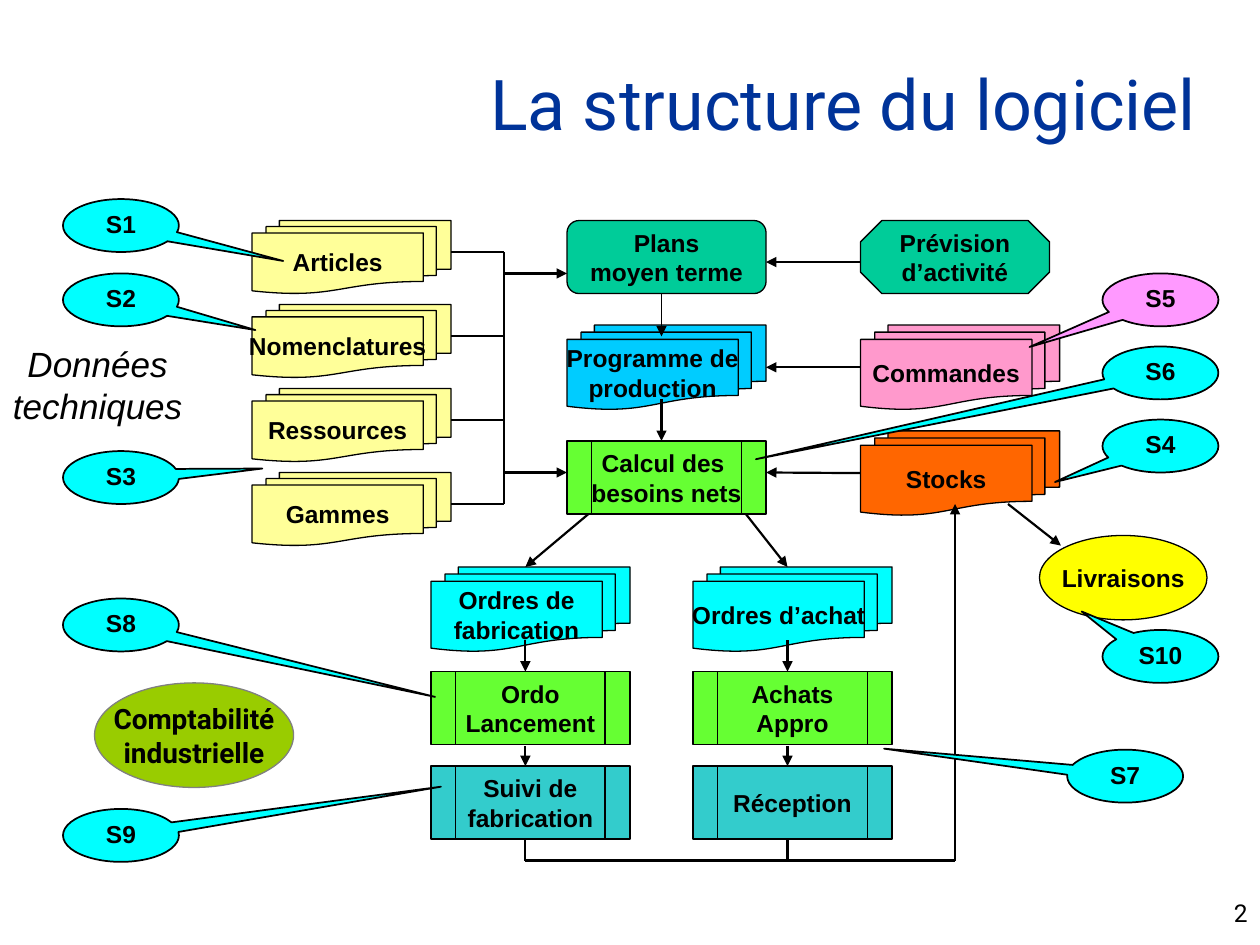
"""Build the slide that maps the modules of a production management program."""
from dataclasses import dataclass

from lxml import etree
from pptx import Presentation
from pptx import util as u
from pptx.dml.color import RGBColor
from pptx.enum import shapes, text
from pptx.oxml.ns import qn

KIND = shapes.MSO_SHAPE
DOCS = KIND.FLOWCHART_MULTIDOCUMENT
PROCESS = KIND.FLOWCHART_PREDEFINED_PROCESS
LEFT, RIGHT = 1, 3


@dataclass(frozen=True)
class Theme:
    black: str = "000000"
    gray: str = "808080"
    navy: str = "003399"
    cream: str = "FFFF99"
    teal: str = "00CC99"
    sky: str = "00CCFF"
    cyan: str = "00FFFF"
    green: str = "66FF33"
    sea: str = "33CCCC"
    pink: str = "FF99CC"
    orchid: str = "FF99FF"
    orange: str = "FF6600"
    yellow: str = "FFFF00"
    olive: str = "99CC00"
    body: str = "Arial"
    display: str = "Roboto"
    label_size: int = 14
    account_size: int = 16
    note_size: int = 20
    title_size: int = 40
    thin: float = 0.75
    callout: float = 1
    flow: float = 1.25
    bus: float = 1.5


THEME = Theme()


@dataclass(frozen=True)
class Node:
    label: str
    left: float
    top: float
    kind: KIND
    fill: str
    width: float = 1.58
    height: float = 0.58
    line: str = THEME.black
    font: str = THEME.body
    size: int = THEME.label_size


@dataclass(frozen=True)
class Link:
    start: tuple[float, float]
    end: tuple[float, float]
    weight: float = THEME.flow
    arrow: bool = True
    source: str = ""
    target: str = ""


@dataclass(frozen=True)
class Callout:
    label: str
    left: float
    top: float
    tail: tuple[float, float]
    fill: str = THEME.cyan


DATA_FILES = ("Articles", "Nomenclatures", "Ressources", "Gammes")
FILE_PITCH = 2 / 3
FILE_LEFT, MAKE_LEFT, PLAN_LEFT, BUY_LEFT, INPUT_LEFT = 2, 3.42, 4.5, 5.5, 6.83
BUS_X, MAKE_X, PLAN_X, BUY_X, RETURN_X = 4, 4.17, 5.25, 6.25, 7.58
RETURN_Y = 6.83

NODES = [
    *(Node(name, FILE_LEFT, 1.75 + row * FILE_PITCH, DOCS, THEME.cream)
      for row, name in enumerate(DATA_FILES)),
    Node("Plans\nmoyen terme", PLAN_LEFT, 1.75, KIND.FLOWCHART_ALTERNATE_PROCESS, THEME.teal),
    Node("Prévision\nd’activité", INPUT_LEFT, 1.75, KIND.OCTAGON, THEME.teal, width=1.5),
    Node("Programme de\nproduction", PLAN_LEFT, 2.58, DOCS, THEME.sky, height=0.67),
    Node("Commandes", INPUT_LEFT, 2.58, DOCS, THEME.pink, height=0.67),
    Node("Calcul des \nbesoins nets", PLAN_LEFT, 3.5, PROCESS, THEME.green),
    Node("Stocks", INPUT_LEFT, 3.42, DOCS, THEME.orange, height=0.67),
    Node("Ordres de\nfabrication", MAKE_LEFT, 4.5, DOCS, THEME.cyan, height=0.67),
    Node("Ordres d’achat", BUY_LEFT, 4.5, DOCS, THEME.cyan, height=0.67),
    Node("Ordo\nLancement", MAKE_LEFT, 5.33, PROCESS, THEME.green),
    Node("Achats\nAppro", BUY_LEFT, 5.33, PROCESS, THEME.green),
    Node("Suivi de\nfabrication", MAKE_LEFT, 6.08, PROCESS, THEME.sea),
    Node("Réception", BUY_LEFT, 6.08, PROCESS, THEME.sea),
    Node("Livraisons", 8.25, 4.25, KIND.OVAL, THEME.yellow, 1.33, 0.67),
    Node("Comptabilité\nindustrielle", 0.75, 5.42, KIND.OVAL, THEME.olive, 1.58, 0.83,
         THEME.gray, THEME.display, THEME.account_size),
]

LINKS = [
    Link((BUS_X, 2), (BUS_X, 4), THEME.bus, arrow=False),
    *(Link((3.58, 2 + row * FILE_PITCH), (BUS_X, 2 + row * FILE_PITCH), THEME.bus, arrow=False)
      for row in range(len(DATA_FILES))),
    *(Link((BUS_X, y), (PLAN_LEFT, y), THEME.bus) for y in (2.17, 3.75)),
    Link((INPUT_LEFT, 2.08), (6.08, 2.08)),
    Link((INPUT_LEFT, 2.92), (6.08, 2.92), source="Commandes",
         target="Programme de\nproduction"),
    Link((INPUT_LEFT, 3.75), (6.08, 3.75), source="Stocks"),
    Link((PLAN_X, 2.33), (PLAN_X, 2.67), THEME.callout),
    Link((PLAN_X, 3.17), (PLAN_X, 3.5)),
    Link((4.67, 4.08), (MAKE_X, 4.5)),
    Link((5.92, 4.08), (BUY_X, 4.5)),
    *(Link((x, top), (x, bottom), arrow=arrow) for x in (MAKE_X, BUY_X)
      for top, bottom, arrow in ((5.08, 5.33, True), (5.92, 6.08, True),
                                 (6.67, RETURN_Y, False))),
    Link((MAKE_X, RETURN_Y), (RETURN_X, RETURN_Y), arrow=False),
    Link((RETURN_X, RETURN_Y), (RETURN_X, 4)),
    Link((8, 4), (8.42, 4.33)),
]

CALLOUTS = [
    Callout("S1", 0.5, 1.58, (1.4, 0.67)),
    Callout("S2", 0.5, 2.17, (1.16, 0.57)),
    Callout("S3", 0.5, 3.58, (1.22, -0.17)),
    Callout("S4", 8.75, 3.33, (-0.91, 0.68)),
    Callout("S5", 8.75, 2.17, (-1.13, 0.89), THEME.orchid),
    Callout("S6", 8.75, 2.75, (-3.49, 1.63)),
    Callout("S7", 8.47, 5.95, (-2.08, -0.52)),
    Callout("S8", 0.5, 4.75, (2.71, 1.36)),
    Callout("S9", 0.5, 6.42, (2.76, -0.92)),
    Callout("S10", 8.75, 5, (-0.68, -0.85)),
]


def write(box, content: str, *, size: int = THEME.label_size, font: str = THEME.body,
          color: str = THEME.black, bold: bool = False, italic: bool = False,
          align=text.PP_ALIGN.CENTER, anchor=text.MSO_ANCHOR.MIDDLE,
          wrap: bool = False, spacing: float = 1.0) -> None:
    frame = box.text_frame
    frame.word_wrap = wrap
    frame.vertical_anchor = anchor
    for index, line in enumerate(content.split("\n")):
        para = frame.add_paragraph() if index else frame.paragraphs[0]
        para.alignment = align
        para.line_spacing = spacing
        span = para.add_run()
        span.text = line
        span.font.size, span.font.name = u.Pt(size), font
        span.font.bold, span.font.italic = bold, italic
        span.font.color.rgb = RGBColor.from_string(color)


def add_box(page, kind: KIND, area: tuple, fill: str, line: str, weight: float):
    box = page.shapes.add_shape(kind, *map(u.Inches, area))
    box.shadow.inherit = False
    box.fill.solid()
    box.fill.fore_color.rgb = RGBColor.from_string(fill)
    box.line.color.rgb = RGBColor.from_string(line)
    box.line.width = u.Pt(weight)
    return box


def draw_node(page, node: Node):
    area = (node.left, node.top, node.width, node.height)
    box = add_box(page, node.kind, area, node.fill, node.line, THEME.thin)
    write(box, node.label, size=node.size, font=node.font, bold=True)
    return box


def draw_link(page, link: Link, boxes: dict) -> None:
    connector = page.shapes.add_connector(
        shapes.MSO_CONNECTOR.STRAIGHT, *map(u.Inches, (*link.start, *link.end)))
    connector.line.color.rgb = RGBColor.from_string(THEME.black)
    connector.line.width = u.Pt(link.weight)
    if link.source:
        connector.begin_connect(boxes[link.source], LEFT)
    if link.target:
        connector.end_connect(boxes[link.target], RIGHT)
    if link.arrow:
        etree.SubElement(connector.line._get_or_add_ln(), qn("a:tailEnd"), type="triangle")
    etree.SubElement(connector._element.spPr, qn("a:effectLst"))


def draw_callout(page, callout: Callout) -> None:
    area = (callout.left, callout.top, 0.92, 0.42)
    box = add_box(page, KIND.OVAL_CALLOUT, area, callout.fill, THEME.black, THEME.callout)
    box.adjustments[0], box.adjustments[1] = callout.tail
    write(box, callout.label, bold=True, spacing=0.9)


def draw_text(page, content: str, area: tuple, **style) -> None:
    write(page.shapes.add_textbox(*map(u.Inches, area)), content, **style)


def main() -> None:
    deck = Presentation()
    deck.slide_width, deck.slide_height = u.Inches(10), u.Inches(7.5)
    page = deck.slides.add_slide(deck.slide_layouts[6])
    draw_text(page, "La structure du logiciel", (0.51, 0.44, 9.08, 0.75), size=THEME.title_size,
              font=THEME.display, color=THEME.navy, align=text.PP_ALIGN.RIGHT, wrap=True)
    draw_text(page, "2", (7.92, 7.08, 2.08, 0.25), font=THEME.display, wrap=True,
              align=text.PP_ALIGN.RIGHT, anchor=text.MSO_ANCHOR.TOP)
    draw_text(page, "Données\ntechniques", (0, 2.67, 1.55, 0.77), size=THEME.note_size,
              italic=True, anchor=text.MSO_ANCHOR.TOP)
    boxes = {node.label: draw_node(page, node) for node in NODES}
    for link in LINKS:
        draw_link(page, link, boxes)
    for callout in CALLOUTS:
        draw_callout(page, callout)
    deck.save("out.pptx")


if __name__ == "__main__":
    main()
